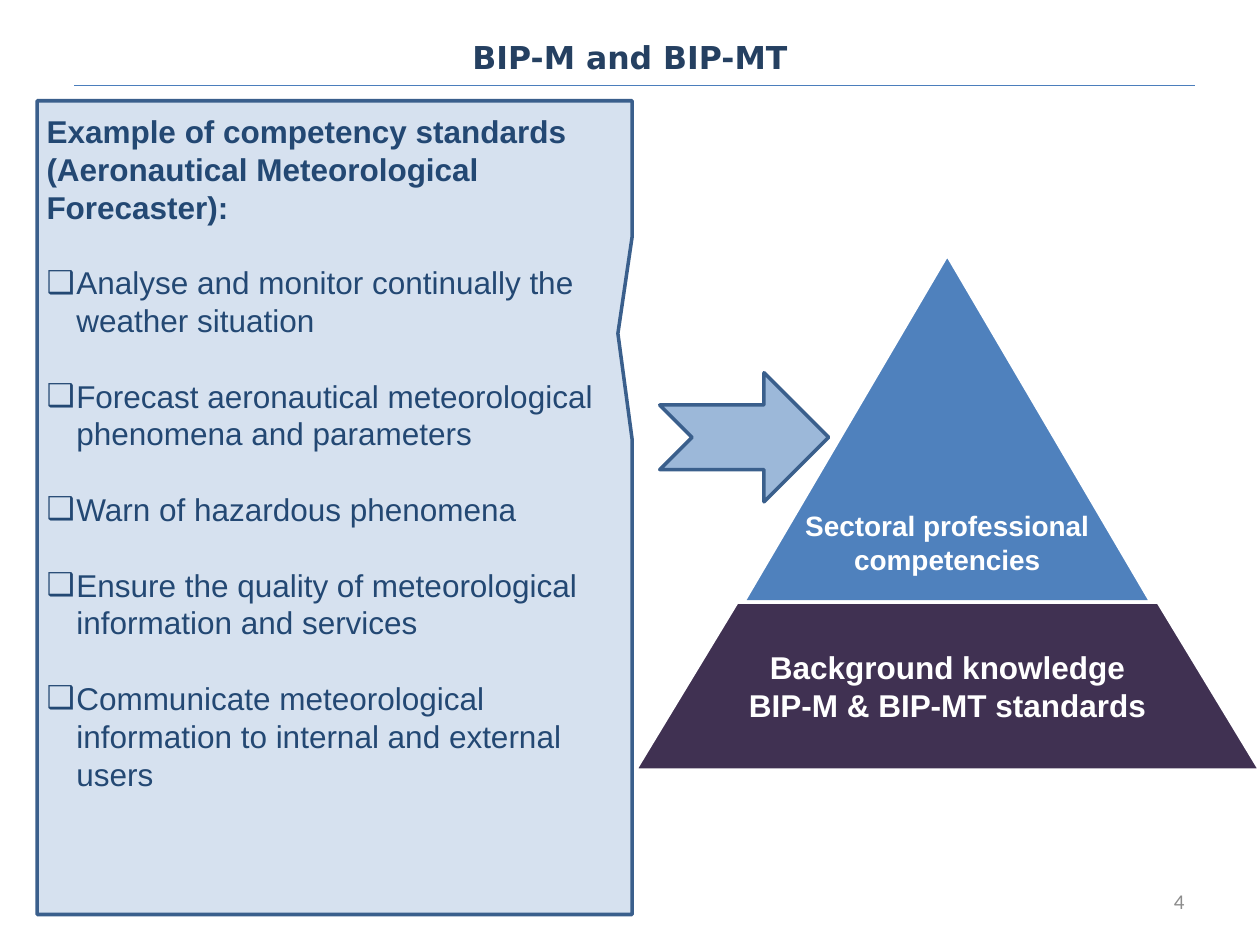
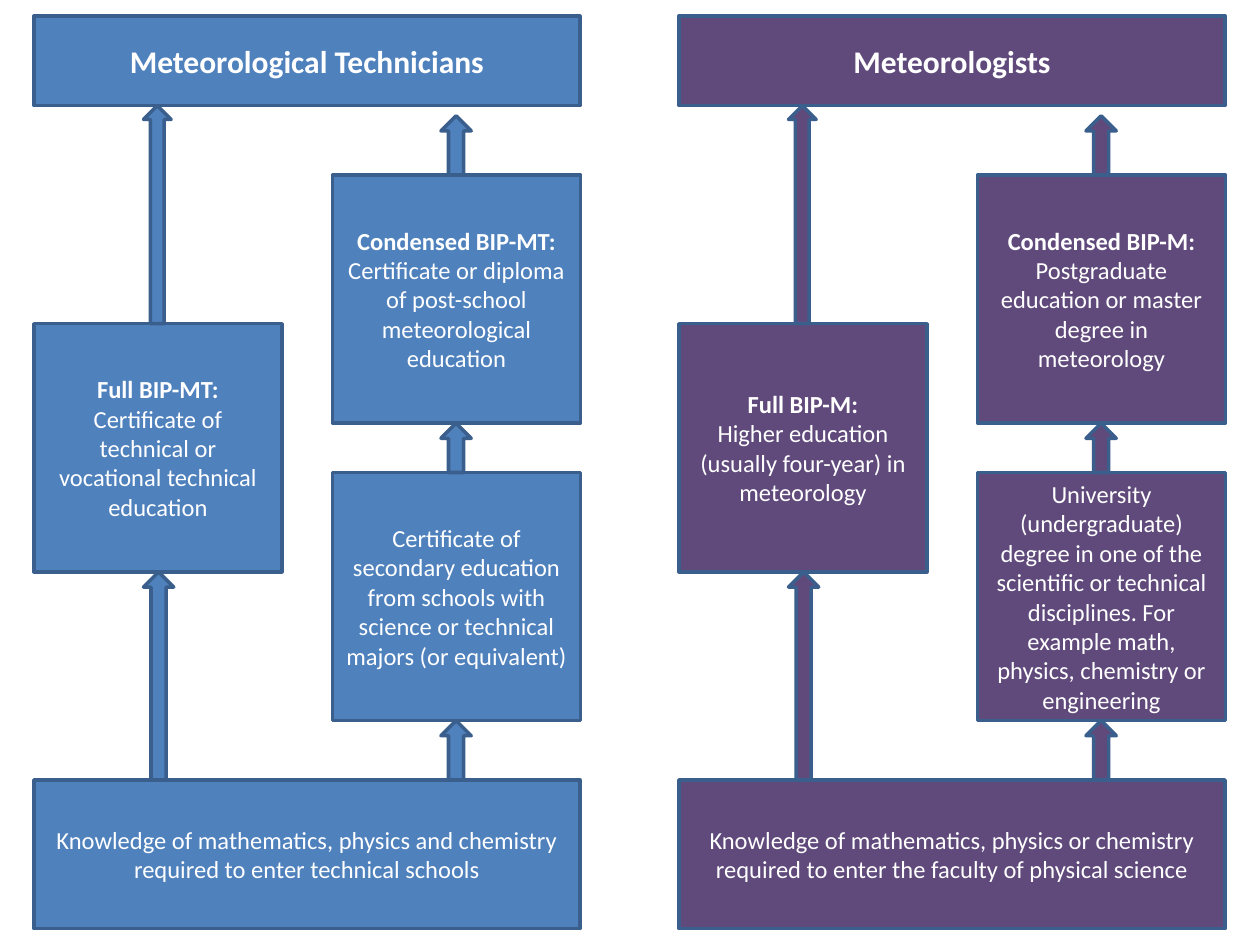
from pptx import Presentation
from pptx.dml.color import RGBColor
from pptx.enum.shapes import MSO_CONNECTOR, MSO_SHAPE as Preset
from pptx.enum.text import MSO_ANCHOR as Anchor, PP_ALIGN as Align
from pptx.oxml.ns import qn
from pptx.util import Pt
from lxml.etree import SubElement

BLUE = RGBColor(0x4F, 0x81, 0xBD)
OUTLINE = RGBColor(0x3A, 0x5F, 0x8C)
RULE = RGBColor(0x4B, 0x7E, 0xBC)
PURPLE = RGBColor(0x60, 0x4A, 0x7B)
DARK_PURPLE = RGBColor(0x40, 0x31, 0x52)
TITLE = RGBColor(0x25, 0x40, 0x61)
NAVY = RGBColor(0x17, 0x37, 0x5E)
GREY = RGBColor(0x8C, 0x8C, 0x8C)
WHITE = RGBColor(0xFF, 0xFF, 0xFF)


def add_preset(slide, preset, box, fill, line=OUTLINE, alpha=None, adjustments=()):
    shape = slide.shapes.add_shape(preset, *map(Pt, box))
    shape.shadow.inherit = False
    shape.fill.solid()
    shape.fill.fore_color.rgb = fill
    if alpha:
        color = shape._element.spPr.find(qn("a:solidFill")).find(qn("a:srgbClr"))
        SubElement(color, qn("a:alpha")).set("val", str(alpha * 1000))
    shape.line.color.rgb = line
    shape.line.width = Pt(2)
    for index, value in enumerate(adjustments):
        shape.adjustments[index] = value
    return shape


def write_text(shape, lines, size=14, font="Calibri", color=WHITE, bold_lines=0,
               align=Align.CENTER, anchor=Anchor.MIDDLE, inset=None, spacing=None, bullets=False):
    frame = shape.text_frame
    frame.word_wrap = True
    frame.vertical_anchor = anchor
    if inset is not None:
        frame.margin_left = frame.margin_right = frame.margin_top = frame.margin_bottom = Pt(inset)
    for index, line in enumerate(lines):
        paragraph = frame.add_paragraph() if index else frame.paragraphs[0]
        paragraph.alignment = align
        if spacing:
            paragraph.line_spacing = Pt(spacing)
        if bullets and index:
            paragraph.space_before = Pt(spacing)
            properties = paragraph._p.get_or_add_pPr()
            properties.set("marL", str(Pt(17)))
            properties.set("indent", str(-Pt(17)))
            SubElement(properties, qn("a:buFont")).set("typeface", font)
            SubElement(properties, qn("a:buChar")).set("char", "❑")
        run = paragraph.add_run()
        run.text = line
        run.font.name = font
        run.font.size = Pt(size)
        run.font.bold = index < bold_lines
        run.font.color.rgb = color


presentation = Presentation()
presentation.slide_width, presentation.slide_height = Pt(720), Pt(540)
blank = presentation.slide_layouts[6]

slide = presentation.slides.add_slide(blank)
page_number = slide.shapes.add_textbox(Pt(516), Pt(500.5), Pt(168), Pt(28.75))
write_text(page_number, ["4"], size=12, color=GREY, align=Align.RIGHT)

title_rule = slide.shapes.add_connector(MSO_CONNECTOR.STRAIGHT, Pt(42.5), Pt(49), Pt(683), Pt(49))
title_rule.line.color.rgb = RULE
title_rule.line.width = Pt(0.75)
SubElement(title_rule._element.spPr, qn("a:effectLst"))

add_preset(slide, Preset.TRAPEZOID, (424.8, 145.5, 233, 198.5), BLUE, WHITE, adjustments=[0.606])
competencies = slide.shapes.add_textbox(Pt(424.8), Pt(289), Pt(233), Pt(42))
write_text(competencies, ["Sectoral professional competencies"], size=16, font="Arial",
           bold_lines=1, inset=1.5, spacing=19.2)

add_preset(slide, Preset.TRAPEZOID, (363, 344, 357, 96), DARK_PURPLE, WHITE, adjustments=[0.606])
background = slide.shapes.add_textbox(Pt(425.5), Pt(344), Pt(232), Pt(96))
write_text(background, ["Background knowledge BIP-M & BIP-MT standards"], size=18, font="Arial",
           bold_lines=1, inset=2, spacing=21.6)

title = slide.shapes.add_textbox(Pt(36), Pt(0), Pt(648), Pt(65.5))
write_text(title, ["BIP-M and BIP-MT"], size=18, font="DejaVu Sans", color=TITLE, bold_lines=1)

standards = slide.shapes.add_textbox(Pt(19.5), Pt(60.5), Pt(342.5), Pt(378))
write_text(standards, [
    "Example of competency standards (Aeronautical Meteorological Forecaster):",
    "Analyse and monitor continually the weather situation",
    "Forecast aeronautical meteorological phenomena and parameters",
    "Warn of hazardous phenomena",
    "Ensure the quality of meteorological information and services",
    "Communicate meteorological information to internal and external users",
], size=18, font="Arial", color=NAVY, bold_lines=1, align=Align.LEFT, anchor=Anchor.TOP,
    spacing=21.6, bullets=True)

add_preset(slide, Preset.RECTANGULAR_CALLOUT, (21.3, 57.6, 340, 465), BLUE, alpha=23,
           adjustments=[0.476, -0.214])
add_preset(slide, Preset.NOTCHED_RIGHT_ARROW, (377, 213, 96.5, 73.8), BLUE, alpha=56)

slide = presentation.slides.add_slide(blank)
SIDE = 141.8
HEADER = (19.4, 9.2, 312, 51.2)
FULL = (19.4, 185, SIDE, SIDE)
CONDENSED = (190, 100, SIDE, SIDE)
PRIOR = (190, 270, SIDE, SIDE)
ENTRY = (19.4, 445.7, 312, 85)
ARROWS = [
    (82, 326.8, 17.3, 118.9),
    (252, 66.2, 17.3, 33.8),
    (252, 241.8, 17.3, 28.2),
    (252, 411.8, 17.3, 33.9),
    (82, 60.4, 15.8, 124.6),
]
PATHWAYS = [
    (0, BLUE, [
        (HEADER, 18, 1, ["Meteorological Technicians"]),
        (FULL, 14, 1, ["Full BIP-MT:", "Certificate of technical or vocational technical education"]),
        (CONDENSED, 14, 1, ["Condensed BIP-MT:",
                            "Certificate or diploma of post-school meteorological education"]),
        (PRIOR, 14, 0, ["Certificate of secondary education from schools with science "
                        "or technical majors (or equivalent)"]),
        (ENTRY, 14, 0, ["Knowledge of mathematics, physics and chemistry required "
                        "to enter technical schools"]),
    ]),
    (368.6, PURPLE, [
        (HEADER, 18, 1, ["Meteorologists"]),
        (FULL, 14, 1, ["Full BIP-M:", "Higher education (usually four-year) in meteorology"]),
        (CONDENSED, 14, 1, ["Condensed BIP-M:",
                            "Postgraduate education or master degree in meteorology"]),
        (PRIOR, 14, 0, ["University (undergraduate) degree in one of the scientific or technical "
                        "disciplines. For example math, physics, chemistry or engineering"]),
        (ENTRY, 14, 0, ["Knowledge of mathematics, physics or chemistry required "
                        "to enter the faculty of physical science"]),
    ]),
]
for offset, color, stages in PATHWAYS:
    for (left, *rest), size, bold_lines, lines in stages:
        stage = add_preset(slide, Preset.RECTANGLE, (left + offset, *rest), color)
        write_text(stage, lines, size=size, bold_lines=bold_lines)
    for left, *rest in ARROWS:
        add_preset(slide, Preset.UP_ARROW, (left + offset, *rest), color)

presentation.save("out.pptx")
